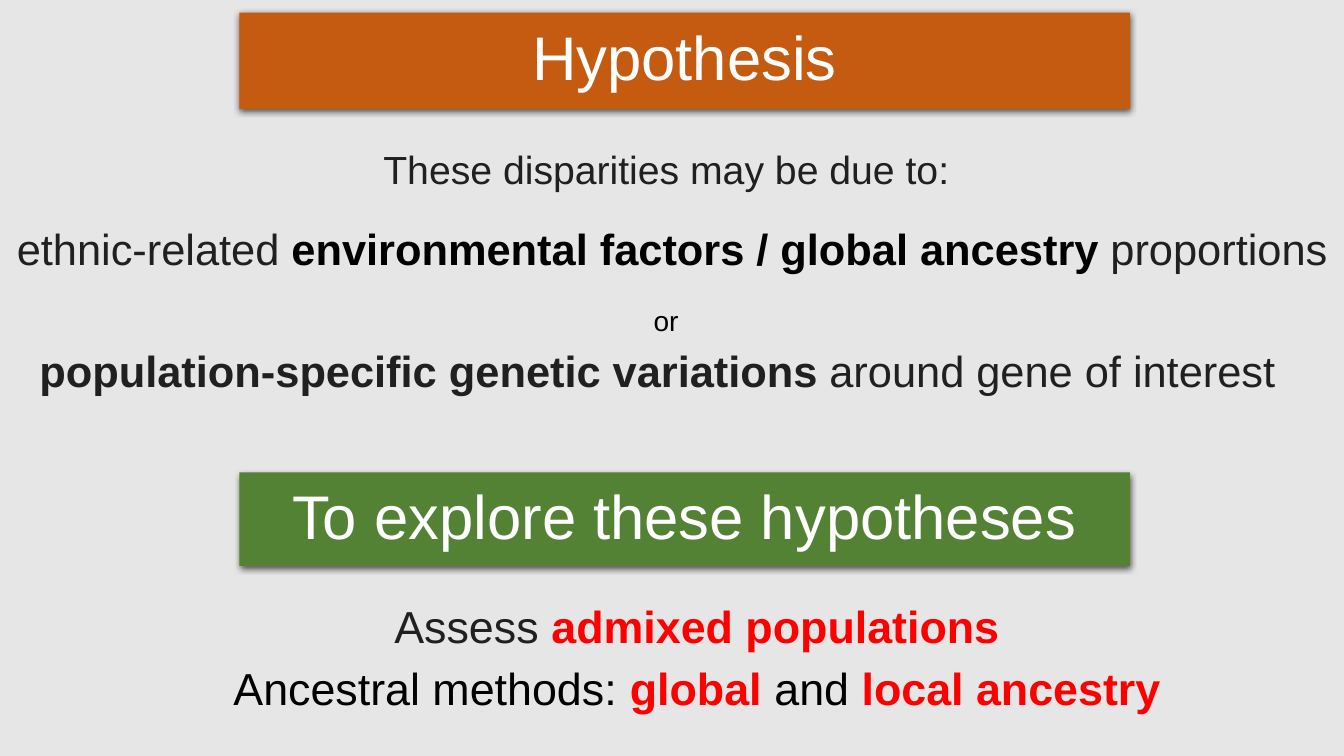
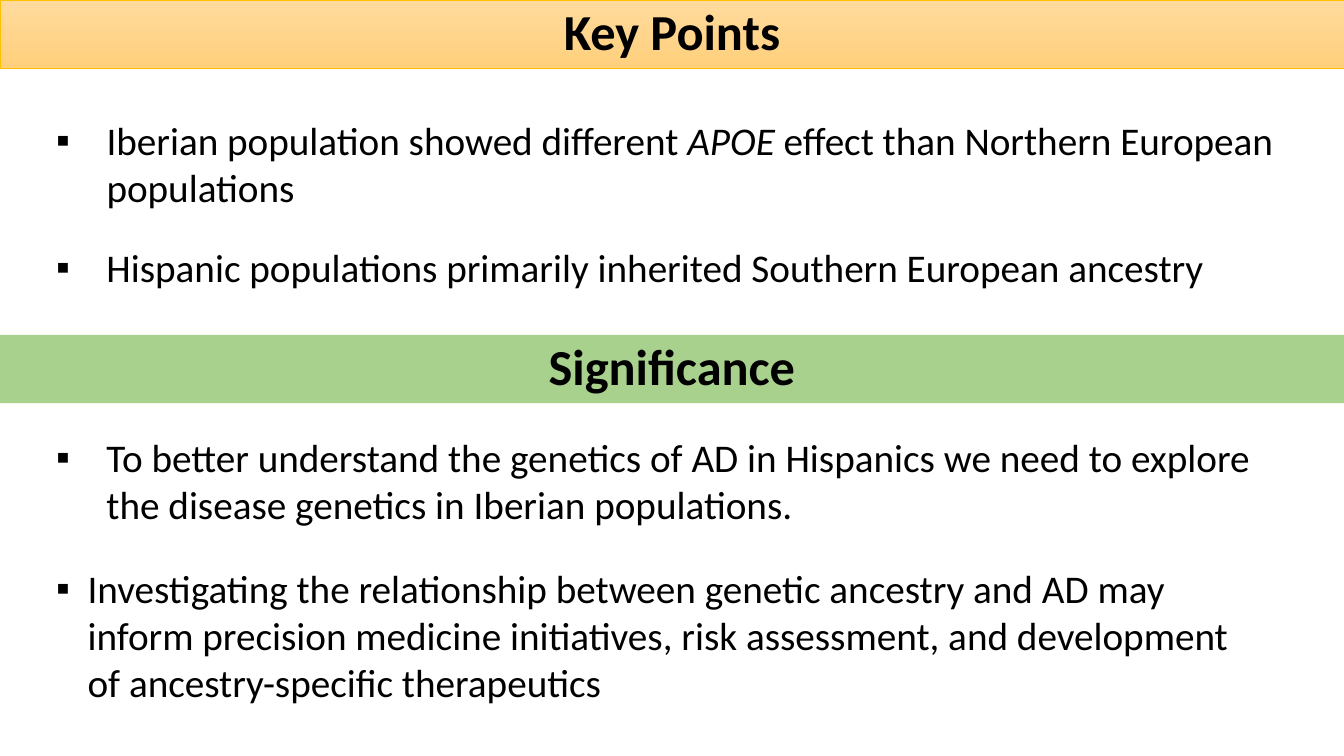
from lxml import etree
from pptx import Presentation
from pptx import util as u
from pptx.dml.color import RGBColor
from pptx.enum import shapes, text
from pptx.oxml import parse_xml
from pptx.oxml.ns import nsdecls, qn

PX = 9525
WIDTH, HEIGHT = 1280, 720
COLORS = {
    "grey": "E7E6E6", "white": "FFFFFF", "black": "000000", "ink": "202020",
    "red": "FF0000", "rust": "C55A11", "leaf": "548235", "mint": "A9D18E",
    "sand": "FFDB9E", "amber": "FFD07C", "gold": "FFC000",
}
SHADOW = (
    f'<a:effectLst {nsdecls("a")}><a:outerShdw blurRad="57150" dist="19050" '
    'dir="5400000" algn="ctr" rotWithShape="0"><a:srgbClr val="000000">'
    '<a:alpha val="63000"/></a:srgbClr></a:outerShdw></a:effectLst>'
)
BANNER = {"name": "Arial", "size": u.Pt(44), "bold": False, "color": "white"}
STRIP = {"name": "Calibri", "size": u.Pt(36), "bold": True, "color": "black"}
POINT = {"name": "Calibri", "size": u.Pt(28), "color": "black"}
BOLD_RED = {"bold": True, "color": "red"}
BLACK = {"color": "black"}


def rgb(name):
    return RGBColor.from_string(COLORS[name])


def arial(size, color="ink"):
    return {"name": "Arial", "size": u.Pt(size), "color": color}


def place(shape, box):
    for side, length in zip(("left", "top", "width", "height"), box):
        setattr(shape, side, length * PX)


def write_runs(paragraph, runs, style):
    for words, changes in runs:
        run = paragraph.add_run()
        run.text = words
        for key, value in {**style, **changes}.items():
            if key == "color":
                run.font.color.rgb = rgb(value)
            else:
                setattr(run.font, key, value)


def text_box(slide, box, lines, style, align=text.PP_ALIGN.CENTER):
    frame = slide.shapes.add_textbox(*(length * PX for length in box)).text_frame
    frame.word_wrap = True
    frame.auto_size = text.MSO_AUTO_SIZE.SHAPE_TO_FIT_TEXT
    for index, runs in enumerate(lines):
        paragraph = frame.add_paragraph() if index else frame.paragraphs[0]
        paragraph.alignment = align
        if index:
            paragraph.space_before = u.Pt(6)
        write_runs(paragraph, runs, style)
    return frame


def bullet_point(slide, box, runs, indent=48):
    frame = text_box(slide, box, [runs], POINT, text.PP_ALIGN.LEFT)
    props = frame.paragraphs[0]._p.get_or_add_pPr()
    props.set("marL", str(indent * PX))
    props.set("indent", str(-indent * PX))
    etree.SubElement(props, qn("a:buFont")).set("typeface", "Arial")
    etree.SubElement(props, qn("a:buChar")).set("char", "▪")


def band(shape, box, heading, style, fill, edge=None, shadow=False):
    place(shape, box)
    if isinstance(fill, tuple):
        shape.fill.gradient()
        shape.fill.gradient_angle = 270
        for stop, color in zip(shape.fill.gradient_stops, fill):
            stop.color.rgb = rgb(color)
    else:
        shape.fill.solid()
        shape.fill.fore_color.rgb = rgb(fill)
    if edge:
        shape.line.color.rgb = rgb(edge)
        shape.line.width = u.Pt(0.5)
    else:
        shape.line.fill.background()
    if shadow:
        shape._element.spPr.append(parse_xml(SHADOW))
    else:
        shape.shadow.inherit = False
    frame = shape.text_frame
    layout = {"word_wrap": True, "auto_size": text.MSO_AUTO_SIZE.NONE,
              "vertical_anchor": text.MSO_ANCHOR.MIDDLE}
    for key, value in layout.items():
        setattr(frame, key, value)
    paragraph = frame.paragraphs[0]
    paragraph.alignment = text.PP_ALIGN.CENTER
    paragraph.line_spacing = 0.9
    write_runs(paragraph, [(heading, {})], style)


def new_slide(deck, background):
    slide = deck.slides.add_slide(deck.slide_layouts[5])
    slide.background.fill.solid()
    slide.background.fill.fore_color.rgb = rgb(background)
    return slide


def add_rectangle(slide):
    return slide.shapes.add_shape(shapes.MSO_SHAPE.RECTANGLE, 0, 0, PX, PX)


def hypothesis_slide(deck):
    slide = new_slide(deck, "grey")
    band(slide.shapes.title, (228, 12, 848, 92), "Hypothesis", BANNER, "rust", shadow=True)
    text_box(slide, (21, 134, 1227, 55), [[("These disparities may be due to:", {})]], arial(28))
    text_box(slide, (0, 207, WIDTH, 61), [[
        ("ethnic-related ", {}),
        ("environmental factors / global ancestry ", {"bold": True, "color": "black"}),
        ("proportions", {}),
    ]], arial(31))
    text_box(slide, (613, 284, 53, 42), [[("or", {})]], arial(20, "black"), text.PP_ALIGN.LEFT)
    text_box(slide, (14, 323, 1224, 60), [[
        ("population-specific genetic variations ", {"bold": True}),
        ("around gene of interest", {}),
    ]], arial(31))
    band(add_rectangle(slide), (228, 450, 848, 89), "To explore these hypotheses",
         BANNER, "leaf", shadow=True)
    text_box(slide, (62, 565, 1204, 121), [
        [("Assess ", {}), ("admixed populations", BOLD_RED)],
        [("Ancestral methods: ", BLACK), ("global ", BOLD_RED),
         ("and ", BLACK), ("local ancestry", BOLD_RED)],
    ], arial(32))


def key_points_slide(deck):
    slide = new_slide(deck, "white")
    band(slide.shapes.title, (0, 0, WIDTH, 65), "Key Points", STRIP, ("sand", "amber"), "gold")
    bullet_point(slide, (44, 106, 1202, 100), [
        ("Iberian population showed different ", {}),
        ("APOE", {"italic": True}),
        (" effect than Northern European populations", {}),
    ])
    bullet_point(slide, (44, 227, 1212, 55), [
        ("Hispanic populations primarily inherited Southern European ancestry", {}),
    ])
    band(add_rectangle(slide), (0, 319, WIDTH, 65), "Significance", STRIP, "mint")
    bullet_point(slide, (44, 408, 1174, 100), [
        ("To better understand the genetics of AD in Hispanics we need to explore "
         "the disease genetics in Iberian populations.", {}),
    ])
    bullet_point(slide, (44, 533, 1174, 145), [
        ("Investigating the relationship between genetic ancestry and AD may inform "
         "precision medicine initiatives, risk assessment, and development of "
         "ancestry-specific therapeutics", {}),
    ], indent=30)


def main():
    deck = Presentation()
    deck.slide_width, deck.slide_height = WIDTH * PX, HEIGHT * PX
    hypothesis_slide(deck)
    key_points_slide(deck)
    deck.save("out.pptx")


if __name__ == "__main__":
    main()
